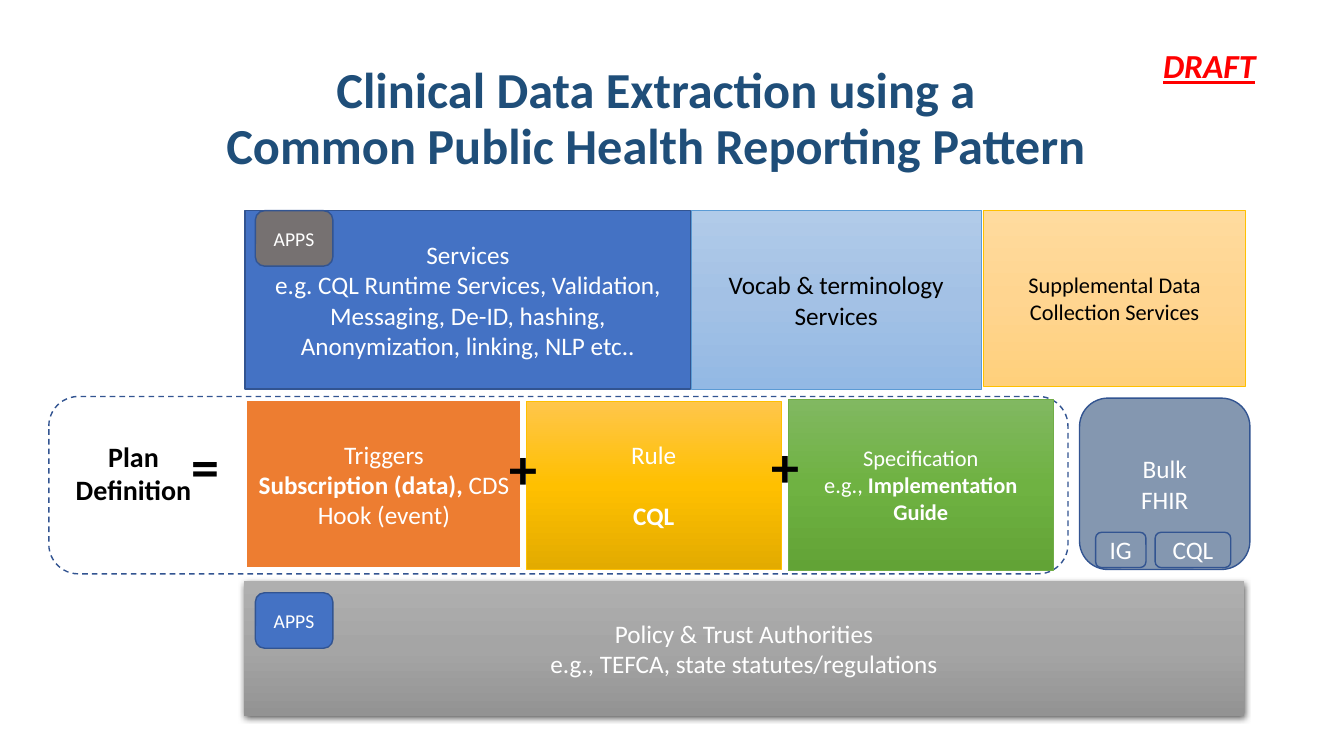
from copy import deepcopy

from lxml.etree import SubElement
from pptx import Presentation
from pptx.dml.color import RGBColor
from pptx.enum.dml import MSO_LINE
from pptx.enum.shapes import MSO_SHAPE
from pptx.enum.text import MSO_ANCHOR, MSO_AUTO_SIZE, PP_ALIGN
from pptx.oxml.ns import qn
from pptx.util import Pt


def rgb(value):
    return RGBColor.from_string(value)


def apply(target, values):
    for name, value in values.items():
        setattr(target, name, value)


class Builder:
    """Draws styled elements on one slide, with lengths in points."""

    font = "Calibri"
    outline = "325491"

    def __init__(self, prs):
        self.slide = prs.slides.add_slide(prs.slide_layouts[6])

    def add_lines(self, tf, text, size, color, align=PP_ALIGN.CENTER, gap=0, spacing=None, **style):
        for i, line in enumerate(text.split("\n")):
            p = tf.paragraphs[0] if i == 0 else tf.add_paragraph()
            p.alignment = align
            if i and gap:
                p.space_before = Pt(gap)
            if spacing:
                p.line_spacing = Pt(spacing)
            for j, part in enumerate(line.split("*")):
                if part:
                    r = p.add_run()
                    r.text = part
                    apply(r.font, {"name": self.font, "size": Pt(size), "bold": j % 2 == 1, **style})
                    r.font.color.rgb = rgb(color)

    def text(self, at, text, size, color="000000", wrap=False, **style):
        tf = self.slide.shapes.add_textbox(*map(Pt, at)).text_frame
        apply(tf, {
            "word_wrap": wrap,
            "auto_size": MSO_AUTO_SIZE.NONE if wrap else MSO_AUTO_SIZE.SHAPE_TO_FIT_TEXT,
            "vertical_anchor": MSO_ANCHOR.MIDDLE if wrap else MSO_ANCHOR.TOP,
        })
        self.add_lines(tf, text, size, color, **{"bold": True, **style})

    def box(self, at, fill=None, text="", size=18, color="FFFFFF", line=outline, width=1,
            kind=MSO_SHAPE.RECTANGLE, gap=0):
        sp = self.slide.shapes.add_shape(kind, *map(Pt, at))
        sp.shadow.inherit = False
        if isinstance(fill, tuple):
            self.gradient(sp, fill)
        elif fill:
            sp.fill.solid()
            sp.fill.fore_color.rgb = rgb(fill)
        else:
            sp.fill.background()
        if line:
            sp.line.color.rgb = rgb(line)
            sp.line.width = Pt(width)
        else:
            sp.line.fill.background()
        apply(sp.text_frame, {"word_wrap": True, "vertical_anchor": MSO_ANCHOR.MIDDLE})
        if text:
            self.add_lines(sp.text_frame, text, size, color, gap=gap)
        return sp

    def round_box(self, at, fill=None, text="", size=18):
        return self.box(at, fill, text, size, kind=MSO_SHAPE.ROUNDED_RECTANGLE)

    def gradient(self, sp, colors):
        sp.fill.gradient()
        sp.fill.gradient_angle = 270
        first = next(sp._element.spPr.iter(qn("a:gs")))
        first.addnext(deepcopy(first))
        for i, (stop, color) in enumerate(zip(sp.fill.gradient_stops, colors)):
            stop.color.rgb = rgb(color)
            stop.position = i / 2

    def shadow(self, sp):
        effects = sp._element.spPr.find(qn("a:effectLst"))
        outer = SubElement(effects, qn("a:outerShdw"), blurRad=str(Pt(4.5)), dist=str(Pt(1.5)),
                           dir="5400000", algn="ctr", rotWithShape="0")
        color = SubElement(outer, qn("a:srgbClr"), val="000000")
        SubElement(color, qn("a:alpha"), val="63000")


def main():
    prs = Presentation()
    apply(prs, {"slide_width": Pt(960), "slide_height": Pt(540)})
    s = Builder(prs)

    s.text((823.7, 28.8, 81.4, 36), "DRAFT", 24, "FF0000", align=PP_ALIGN.LEFT,
           italic=True, underline=True)

    plan = s.round_box((34.9, 283.2, 728, 126.7))
    plan.line.dash_style = MSO_LINE.DASH
    s.box((176, 286, 196.5, 120), "ED7D31",
          "Triggers\n*Subscription (data), *CDS Hook (event)", line="FFFFFF", width=1.5)
    policy = s.box((174.3, 414.7, 714.3, 96.5), ("AFAFAF", "A5A5A5", "939393"),
                   "Policy & Trust Authorities\ne.g., TEFCA, state statutes/regulations", line=None)
    s.shadow(policy)
    s.box((375.9, 286.5, 182.1, 120.3), ("FFC64B", "FFC000", "E3AB00"), "Rule\n*CQL*",
          line="FFC000", width=0.5, gap=22)

    s.box((175.1, 150.5, 318.3, 127.5), "4472C4",
          "Services\ne.g. CQL Runtime Services, Validation, Messaging, De-ID, hashing, "
          "Anonymization, linking, NLP etc..")
    s.box((493.7, 150.5, 207.3, 127.5), ("B1CBE9", "A3C1E5", "93B9E4"),
          "Vocab & terminology Services", color="000000", line="5B9BD5", width=0.5)
    s.box((563, 285.1, 189.5, 122.5), ("81B861", "6FB242", "62A336"),
          "Specification\ne.g., *Implementation*\n*Guide*", 16, line="70AD47", width=0.5)
    s.box((702.6, 150.5, 187.2, 125.2), ("FFDB9E", "FFD590", "FFD07C"),
          "Supplemental Data Collection Services", 16, "000000", line="FFC000", width=0.5)

    for left, top, sign in ((357.1, 306, "+"), (544.3, 304.6, "+"), (129.6, 304.6, "=")):
        s.text((left, top, 37.4, 69.8), sign, 40, align=PP_ALIGN.LEFT)
    s.text((42.5, 310.3, 105.8, 69.8), "Plan\nDefinition", 20)

    for top, fill in ((423.4, "4472C4"), (150.5, "767171")):
        s.round_box((182.4, top, 55.4, 39.6), fill, "APPS", 14)

    s.round_box((771.1, 284.4, 121.7, 122.4), "8497B0", "Bulk\nFHIR")
    for left, width, name in ((782.6, 36, "IG"), (825.1, 54, "CQL")):
        s.round_box((left, 380.2, width, 25.2), "8497B0", name)

    s.text((54.7, 51.8, 828, 65.5),
           "Clinical Data Extraction using a\nCommon Public Health Reporting Pattern",
           36, "1F4E79", wrap=True, spacing=40)

    prs.save("out.pptx")


if __name__ == "__main__":
    main()
